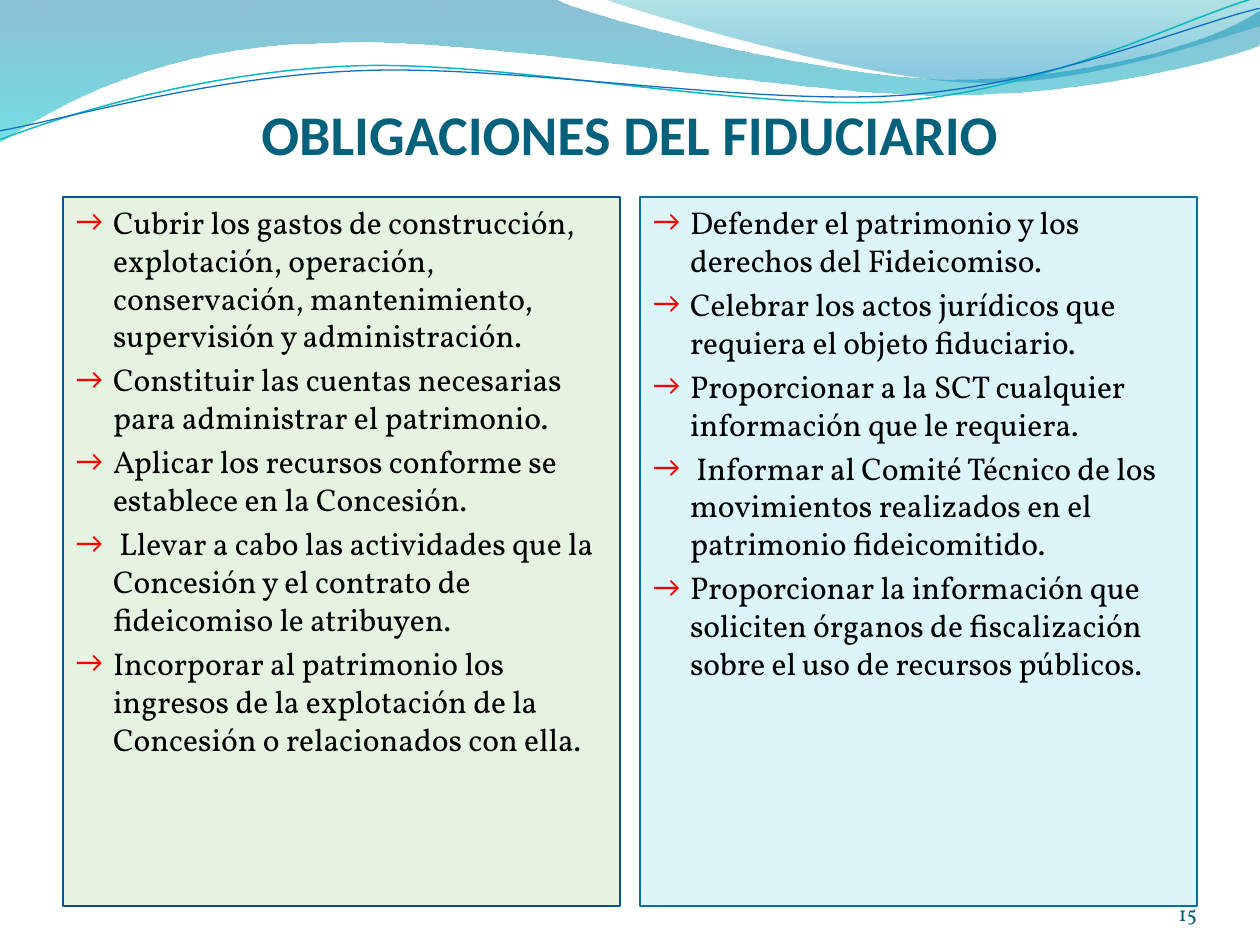
"""Build the slide on the obligations of the trustee."""
from lxml.etree import SubElement
from pptx import Presentation
from pptx.dml.color import RGBColor
from pptx.enum.text import MSO_ANCHOR as Anchor, MSO_AUTO_SIZE as AutoSize, PP_ALIGN as Align
from pptx.oxml.ns import qn
from pptx.util import Pt

PX = 914400 / 126
SERIF, SANS = "Vollkorn", "Calibri"
STRAND_ROTATION = 357.3

TITLE = "OBLIGACIONES DEL FIDUCIARIO"
PAGE = "15"
PANELS = [
    ("E5F4E0", "095295", [
        "Cubrir los gastos de construcción, explotación, operación, conservación, "
        "mantenimiento, supervisión y administración.",
        "Constituir las cuentas necesarias para administrar el patrimonio. ",
        "Aplicar los recursos conforme se establece en la Concesión.",
        " Llevar a cabo las actividades que la Concesión y el contrato de fideicomiso le atribuyen.",
        "Incorporar al patrimonio los ingresos de la explotación de la Concesión "
        "o relacionados con ella.",
    ]),
    ("DBF5F9", "0074A1", [
        "Defender el patrimonio y los derechos del Fideicomiso.",
        "Celebrar los actos jurídicos que requiera el objeto fiduciario.",
        "Proporcionar a la SCT cualquier información que le requiera.",
        " Informar al Comité Técnico de los movimientos realizados en el patrimonio fideicomitido.",
        "Proporcionar la información que soliciten órganos de fiscalización "
        "sobre el uso de recursos públicos.",
    ]),
]

WAVES = [
    ([(0, 0), (554, -1), (600, 21, 837, 79, 955, 79), (1075, 79, 1207, 47, 1260, 11),
      (1261, 45), (1239, 55, 1096, 96, 940, 95), (784, 95, 481, 35, 324, 43),
      (163, 45, 58, 105, -1, 142)],
     [(0, "0074A1", 45), (1, "00C6CF", 55)]),
    ([(604, -1), (641, 14, 859, 78, 969, 82), (1079, 87, 1211, 40, 1260, 26), (1260, 0)],
     [(0, "00A1A9", 30), (0.8, "008BBF", 45)]),
]
STRANDS = [
    ([(-2, 110), (58, 90, 199, 52, 350, 53), (499, 53, 745, 117, 896, 114),
      (1049, 109, 1184, 45, 1260, 27)], "0AB8BF", 0.85),
    ([(-2, 101), (57, 94, 207, 57, 357, 58), (509, 58, 750, 112, 902, 108),
      (1052, 104, 1188, 52, 1262, 38)], "0F6FC6", 0.75),
]


def px(value):
    return round(value * PX)


def color(value):
    return RGBColor.from_string(value)


def place(shape, left, top, width, height):
    shape.left, shape.top, shape.width, shape.height = map(px, (left, top, width, height))


def add_outline(shapes, steps, closed):
    """Draw straight steps of one point and curved steps of three points."""
    points = [pair for step in steps for pair in zip(step[::2], step[1::2])]
    builder = shapes.build_freeform(*points[0], scale=PX)
    builder.add_line_segments(points[1:], close=closed)
    shape = builder.convert_to_shape()
    shape.shadow.inherit = False
    segments = iter(list(shape.element.iter(qn("a:lnTo"))))
    for step in steps[1:]:
        first = next(segments)
        if len(step) == 6:
            first.tag = qn("a:cubicBezTo")
            for _ in range(2):
                extra = next(segments)
                first.append(extra[0])
                extra.getparent().remove(extra)
    return shape


def add_wave(shapes, steps, stops):
    shape = add_outline(shapes, steps, True)
    shape.line.fill.background()
    shape.fill.gradient()
    shape.fill.gradient_angle = 270
    for stop, (position, value, _) in zip(shape.fill.gradient_stops, stops):
        stop.position = position
        stop.color.rgb = color(value)
    for element, (_, _, opacity) in zip(shape.element.spPr.iter(qn("a:srgbClr")), stops):
        SubElement(element, qn("a:alpha"), val=str(opacity * 1000))


def add_strand(shapes, steps, value, width):
    shape = add_outline(shapes, steps, False)
    shape.rotation = STRAND_ROTATION
    shape.fill.background()
    shape.line.color.rgb = color(value)
    shape.line.width = Pt(width)


def style(paragraph, name, size, value, bold=False):
    for run in paragraph.runs:
        font = run.font
        font.name, font.size, font.bold = name, Pt(size), bold
        font.color.rgb = color(value)


def set_frame(frame, anchor, margins):
    frame.word_wrap = True
    frame.auto_size = AutoSize.NONE
    frame.vertical_anchor = anchor
    (frame.margin_left, frame.margin_top,
     frame.margin_right, frame.margin_bottom) = map(px, margins)


def add_bullet(paragraph):
    properties = paragraph._p.get_or_add_pPr()
    properties.set("marL", str(px(37)))
    properties.set("indent", str(px(-37)))
    bullet_color = SubElement(properties, qn("a:buClr"))
    SubElement(bullet_color, qn("a:srgbClr"), val="FF0000")
    SubElement(properties, qn("a:buSzPct"), val="95000")
    SubElement(properties, qn("a:buFont"), typeface=SANS)
    SubElement(properties, qn("a:buChar"), char="→")


def fill_panel(panel, fill, line, items):
    panel.fill.solid()
    panel.fill.fore_color.rgb = color(fill)
    panel.line.color.rgb = color(line)
    panel.line.width = Pt(0.75)
    frame = panel.text_frame
    set_frame(frame, Anchor.TOP, (13, 6, 13, 6))
    frame.text = "\n".join(items)
    for paragraph in frame.paragraphs:
        add_bullet(paragraph)
        style(paragraph, SERIF, 18, "000000")


def main():
    presentation = Presentation()
    presentation.slide_width, presentation.slide_height = px(1260), px(945)
    slide = presentation.slides.add_slide(presentation.slide_layouts[3])
    title, *panels = slide.placeholders

    for wave in WAVES:
        add_wave(slide.shapes, *wave)
    strands = slide.shapes.add_group_shape()
    for strand in STRANDS:
        add_strand(strands.shapes, *strand)

    place(title, 63, 68, 1134, 99)
    set_frame(title.text_frame, Anchor.BOTTOM, (0, 6, 0, 0))
    title.text_frame.text = TITLE
    heading = title.text_frame.paragraphs[0]
    heading.alignment = Align.CENTER
    style(heading, SANS, 32, "04617B", True)

    for index, (panel, content) in enumerate(zip(panels, PANELS)):
        place(panel, 63 + index * 577, 197, 557, 709)
        fill_panel(panel, *content)

    number = slide.shapes.add_textbox(px(1092), px(876), px(105), px(50))
    set_frame(number.text_frame, Anchor.BOTTOM, (0, 0, 0, 0))
    number.text_frame.text = PAGE
    paragraph = number.text_frame.paragraphs[0]
    paragraph.alignment = Align.RIGHT
    style(paragraph, SERIF, 12, "045D75")

    presentation.save("out.pptx")


if __name__ == "__main__":
    main()
